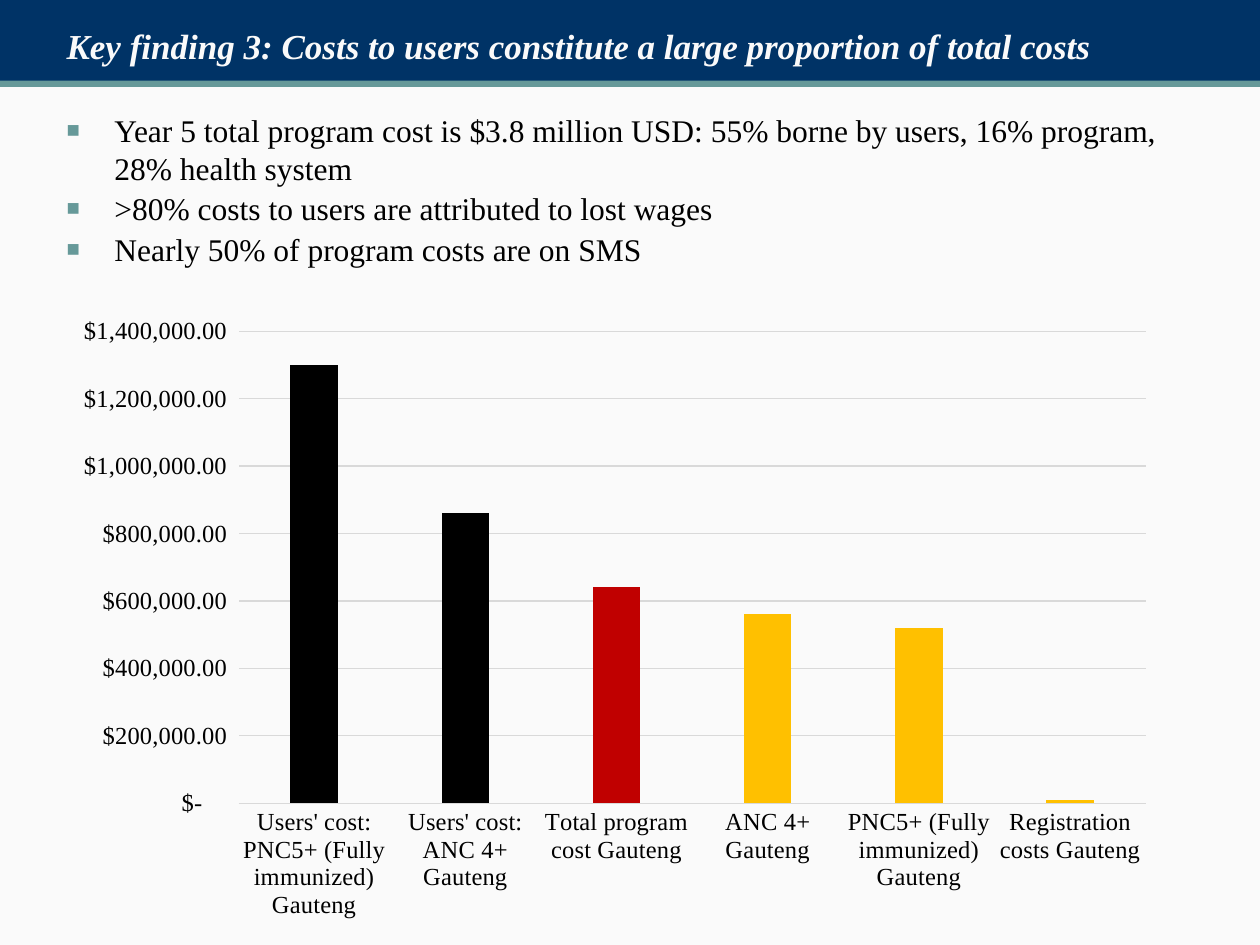
from lxml import etree
from pptx import Presentation
from pptx.chart.data import CategoryChartData
from pptx.dml.color import RGBColor
from pptx.enum.chart import XL_CHART_TYPE, XL_TICK_MARK
from pptx.enum.shapes import MSO_SHAPE
from pptx.enum.text import MSO_ANCHOR
from pptx.oxml import parse_xml
from pptx.oxml.ns import nsdecls, qn
from pptx.util import Inches, Pt

RECTANGLE = MSO_SHAPE.RECTANGLE
BOTTOM, TOP = MSO_ANCHOR.BOTTOM, MSO_ANCHOR.TOP
COLUMNS = XL_CHART_TYPE.COLUMN_CLUSTERED
NO_TICK = XL_TICK_MARK.NONE

FONT = "Times New Roman"
COLORS = {
    "paper": "FAFAFA", "navy": "003366", "teal": "669999", "ink": "000000",
    "grid": "D9D9D9", "series": "666699",
    "users": "000000", "program": "C00000", "health": "FFC000",
}
DOLLARS = r'_("$"* #,##0.00_);_("$"* \(#,##0.00\);_("$"* "-"??_);_(@_)'

FINDINGS = [
    "Year 5 total program cost is $3.8 million USD: 55% borne by users, "
    "16% program, 28% health system",
    ">80% costs to users are attributed to lost wages",
    "Nearly 50% of program costs are on SMS",
]
# Label, annual cost, who bears it
COSTS = [
    ("Users' cost: PNC5+ (Fully immunized) Gauteng", 1300000, "users"),
    ("Users' cost: ANC 4+ Gauteng", 860000, "users"),
    ("Total program cost Gauteng", 640000, "program"),
    ("ANC 4+ Gauteng", 560000, "health"),
    ("PNC5+ (Fully immunized) Gauteng", 520000, "health"),
    ("Registration costs Gauteng", 10000, "health"),
]


def rgb(name):
    return RGBColor.from_string(COLORS[name])


class SlideBuilder:
    def __init__(self, slide):
        self.slide = slide
        background = slide.background.fill
        background.solid()
        background.fore_color.rgb = rgb("paper")

    def band(self, left, top, width, height, color):
        band = self.slide.shapes.add_shape(
            RECTANGLE, Inches(left), Inches(top), Inches(width), Inches(height))
        band.shadow.inherit = False
        band.fill.solid()
        band.fill.fore_color.rgb = rgb(color)
        band.line.fill.background()

    def text_frame(self, left, top, width, height, anchor):
        box = self.slide.shapes.add_textbox(
            Inches(left), Inches(top), Inches(width), Inches(height))
        frame = box.text_frame
        frame.word_wrap = True
        frame.vertical_anchor = anchor
        return frame

    def run(self, paragraph, text, size, color, emphasis=False):
        run = paragraph.add_run()
        run.text = text
        run.font.name = FONT
        run.font.size = Pt(size)
        run.font.bold = run.font.italic = emphasis
        run.font.color.rgb = rgb(color)

    def title(self, text):
        frame = self.text_frame(0.43, 0.1, 9.18, 0.48, BOTTOM)
        self.run(frame.paragraphs[0], text, 20, "paper", emphasis=True)

    def bullets(self, lines):
        frame = self.text_frame(0.43, 0.83, 9.18, 6.04, TOP)
        for index, line in enumerate(lines):
            paragraph = frame.add_paragraph() if index else frame.paragraphs[0]
            paragraph.space_before = paragraph.space_after = Pt(0.9)
            self.square_bullet(paragraph)
            self.run(paragraph, line, 18, "ink")

    def square_bullet(self, paragraph):
        props = paragraph._p.get_or_add_pPr()
        props.set("marL", str(Inches(0.38)))
        props.set("indent", str(-Inches(0.38)))
        color = etree.SubElement(props, qn("a:buClr"))
        etree.SubElement(color, qn("a:srgbClr"), val=COLORS["teal"])
        etree.SubElement(props, qn("a:buSzPct"), val="70000")
        etree.SubElement(props, qn("a:buFont"), typeface=FONT)
        etree.SubElement(props, qn("a:buChar"), char="■")

    def grid_line(self, line):
        line.color.rgb = rgb("grid")
        line.width = Pt(0.75)

    def cost_chart(self, costs):
        data = CategoryChartData()
        data.categories = [label for label, _, _ in costs]
        data.add_series("Series 1", [cost for _, cost, _ in costs])
        chart = self.slide.shapes.add_chart(
            COLUMNS, Inches(0.44), Inches(2.42), Inches(8.83), Inches(4.97),
            data).chart
        chart.has_legend = chart.has_title = False
        chart.font.name = FONT
        chart.font.size = Pt(14)
        chart.font.color.rgb = rgb("ink")

        # Chart area matches the slide background
        chart._chartSpace.find(qn("c:chart")).addnext(parse_xml(
            f'<c:spPr {nsdecls("c", "a")}><a:solidFill>'
            f'<a:srgbClr val="{COLORS["paper"]}"/></a:solidFill>'
            '<a:ln><a:noFill/></a:ln></c:spPr>'))

        # Axes
        for axis in (chart.category_axis, chart.value_axis):
            axis.major_tick_mark = axis.minor_tick_mark = NO_TICK
        self.grid_line(chart.category_axis.format.line)
        value_axis = chart.value_axis
        value_axis.minimum_scale, value_axis.maximum_scale = 0, 1400000
        value_axis.major_unit = 200000
        value_axis.format.line.fill.background()
        self.grid_line(value_axis.major_gridlines.format.line)
        value_axis.tick_labels.number_format = DOLLARS
        value_axis.tick_labels.number_format_is_linked = False

        # Columns, coloured by who bears the cost
        plot = chart.plots[0]
        plot.gap_width, plot.overlap = 219, -27
        plot.vary_by_categories = False
        series = plot.series[0]
        series.format.fill.solid()
        series.format.fill.fore_color.rgb = rgb("series")
        for index, (_, _, bearer) in enumerate(costs):
            fill = series.points[index].format.fill
            fill.solid()
            fill.fore_color.rgb = rgb(bearer)


def main():
    deck = Presentation()
    deck.slide_width, deck.slide_height = Inches(10), Inches(7.5)
    builder = SlideBuilder(deck.slides.add_slide(deck.slide_layouts[6]))

    # Header
    builder.band(0, 0, 10.01, 0.66, "navy")
    builder.band(0, 0.64, 10.01, 0.05, "teal")
    builder.title("Key finding 3: Costs to users constitute "
                  "a large proportion of total costs")

    # Findings and costs
    builder.bullets(FINDINGS)
    builder.cost_chart(COSTS)
    deck.save("out.pptx")


if __name__ == "__main__":
    main()
